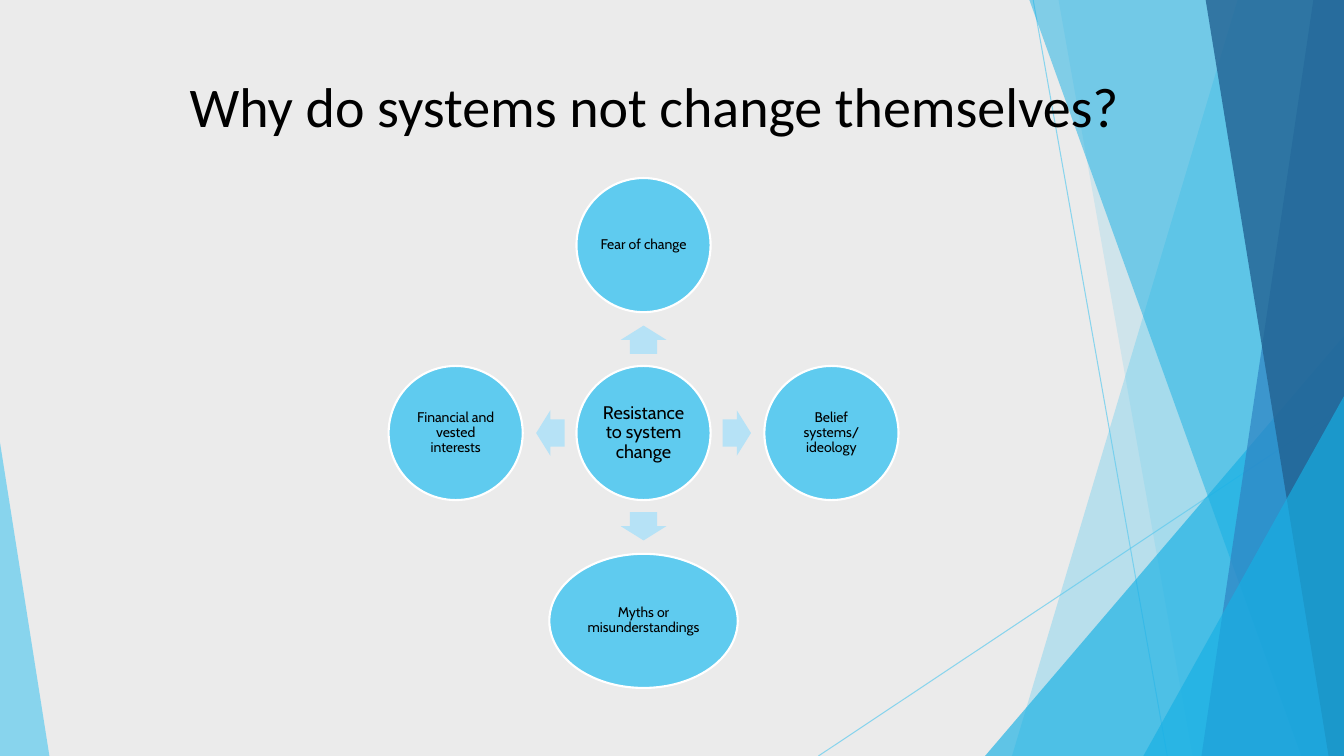
from dataclasses import dataclass

from lxml.etree import SubElement
from pptx import Presentation
from pptx.dml.color import RGBColor
from pptx.enum.shapes import MSO_CONNECTOR, MSO_SHAPE
from pptx.enum.text import MSO_ANCHOR, PP_ALIGN
from pptx.oxml.ns import qn
from pptx.shapes.autoshape import Shape
from pptx.slide import Slide
from pptx.text.text import TextFrame
from pptx.util import Pt

BLACK = RGBColor(0x00, 0x00, 0x00)
WHITE = RGBColor(0xFF, 0xFF, 0xFF)
GREY = RGBColor(0xEB, 0xEB, 0xEB)
SKY = RGBColor(0x5F, 0xCB, 0xEF)
CYAN = RGBColor(0x17, 0xB0, 0xE4)
BLUE = RGBColor(0x2E, 0x83, 0xC3)
NAVY = RGBColor(0x22, 0x62, 0x92)
PALE = RGBColor(0xB6, 0xE2, 0xF6)

WIDTH, HEIGHT = 960, 540
BLEED = 0.6  # facets start just above the slide's top edge
CENTER_X, CENTER_Y = 459.7, 309.3
DIAMETER = 95.8
CIRCLE_STEP, ARROW_STEP = 134.2, 66.6
ARROW_W, ARROW_H = 20.3, 32.5


@dataclass
class Ray:
    x1: float
    y1: float
    x2: float
    y2: float


@dataclass
class Facet:
    """Four-sided panel reaching the right edge of the slide."""
    top_x: float
    bottom_x: float
    color: RGBColor
    alpha: int


@dataclass
class Wedge:
    """Triangle standing on the bottom edge, apex at its left or right side."""
    left: float
    top: float
    width: float
    apex: float
    color: RGBColor
    alpha: int


@dataclass
class Reason:
    text: str
    dx: int
    dy: int
    rotation: int
    width: float = DIAMETER


RAYS = [Ray(738, 0, 833.8, HEIGHT), Ray(WIDTH, 290.2, 584.6, HEIGHT)]

PANELS = [
    Facet(884.2, 722.9, SKY, 36),
    Facet(756, 851.8, SKY, 20),
    Wedge(703.6, 240, 256.4, 1, CYAN, 66),
    Facet(735.1, 929.5, CYAN, 50),
    Facet(938.2, 858.2, BLUE, 70),
    Facet(861.1, 949, NAVY, 80),
    Wedge(816.7, 283, 143.3, 1, CYAN, 66),
    Wedge(0, 316.1, 35.3, 0, SKY, 70),
]

REASONS = [
    Reason("Fear of change", 0, -1, 270),
    Reason("Belief systems/ ideology", 1, 0, 0),
    Reason("Myths or misunderstandings", 0, 1, 90, 134.6),
    Reason("Financial and vested interests", -1, 0, 180),
]


def set_alpha(s, percent: int) -> None:
    color = s._element.spPr.find(".//" + qn("a:srgbClr"))
    SubElement(color, qn("a:alpha")).set("val", str(percent * 1000))


def paint(s: Shape, color: RGBColor) -> None:
    s.shadow.inherit = False
    s.fill.solid()
    s.fill.fore_color.rgb = color
    s.line.fill.background()


def write(tf: TextFrame, text: str, font: str, size: float) -> None:
    tf.word_wrap = True
    p = tf.paragraphs[0]
    p.alignment = PP_ALIGN.CENTER
    r = p.add_run()
    r.text = text
    r.font.name = font
    r.font.size = Pt(size)
    r.font.color.rgb = BLACK


def add_ray(slide: Slide, ray: Ray) -> None:
    s = slide.shapes.add_connector(
        MSO_CONNECTOR.STRAIGHT, Pt(ray.x1), Pt(ray.y1), Pt(ray.x2), Pt(ray.y2))
    s.line.color.rgb = SKY
    s.line.width = Pt(0.75)
    set_alpha(s, 70)
    SubElement(s._element.spPr, qn("a:effectLst"))


def add_panel(slide: Slide, panel: Facet | Wedge) -> None:
    if isinstance(panel, Facet):
        builder = slide.shapes.build_freeform(Pt(panel.top_x), Pt(-BLEED))
        corners = [(WIDTH, -BLEED), (WIDTH, HEIGHT), (panel.bottom_x, HEIGHT)]
        builder.add_line_segments([(Pt(x), Pt(y)) for x, y in corners], close=True)
        s = builder.convert_to_shape()
    else:
        s = slide.shapes.add_shape(
            MSO_SHAPE.ISOSCELES_TRIANGLE, Pt(panel.left), Pt(panel.top),
            Pt(panel.width), Pt(HEIGHT - panel.top))
        s.adjustments[0] = panel.apex
    paint(s, panel.color)
    set_alpha(s, panel.alpha)


def add_centered(slide: Slide, kind: MSO_SHAPE, x: float, y: float,
                 width: float, height: float, color: RGBColor) -> Shape:
    s = slide.shapes.add_shape(
        kind, Pt(x - width / 2), Pt(y - height / 2), Pt(width), Pt(height))
    paint(s, color)
    return s


def add_circle(slide: Slide, text: str, x: float, y: float, width: float,
               size: float, inset: float) -> None:
    s = add_centered(slide, MSO_SHAPE.OVAL, x, y, width, DIAMETER, SKY)
    s.line.color.rgb = WHITE
    s.line.width = Pt(1.5)
    tf = s.text_frame
    tf.margin_left = tf.margin_right = tf.margin_top = tf.margin_bottom = Pt(inset)
    tf.vertical_anchor = MSO_ANCHOR.MIDDLE
    write(tf, text, "Cabin", size)
    tf.paragraphs[0].line_spacing = 0.9


def add_reason(slide: Slide, reason: Reason) -> None:
    arrow = add_centered(
        slide, MSO_SHAPE.RIGHT_ARROW, CENTER_X + reason.dx * ARROW_STEP,
        CENTER_Y + reason.dy * ARROW_STEP, ARROW_W, ARROW_H, PALE)
    arrow.adjustments[0] = 0.6
    arrow.adjustments[1] = 0.5
    arrow.rotation = reason.rotation
    add_circle(slide, reason.text, CENTER_X + reason.dx * CIRCLE_STEP,
               CENTER_Y + reason.dy * CIRCLE_STEP, reason.width, 10, 1)


def main() -> None:
    prs = Presentation()
    prs.slide_width, prs.slide_height = Pt(WIDTH), Pt(HEIGHT)
    slide = prs.slides.add_slide(prs.slide_layouts[6])
    slide.background.fill.solid()
    slide.background.fill.fore_color.rgb = GREY

    # Faceted backdrop
    for ray in RAYS:
        add_ray(slide, ray)
    for panel in PANELS:
        add_panel(slide, panel)

    # Title
    title = slide.shapes.add_textbox(Pt(71.3), Pt(47.5), Pt(792), Pt(104.4))
    write(title.text_frame, "Why do systems not change themselves?", "Calibri", 40)

    # Hub and the reasons around it
    add_circle(slide, "Resistance to system change", CENTER_X, CENTER_Y,
               DIAMETER, 13, 1.3)
    for reason in REASONS:
        add_reason(slide, reason)

    prs.save("out.pptx")


if __name__ == "__main__":
    main()
